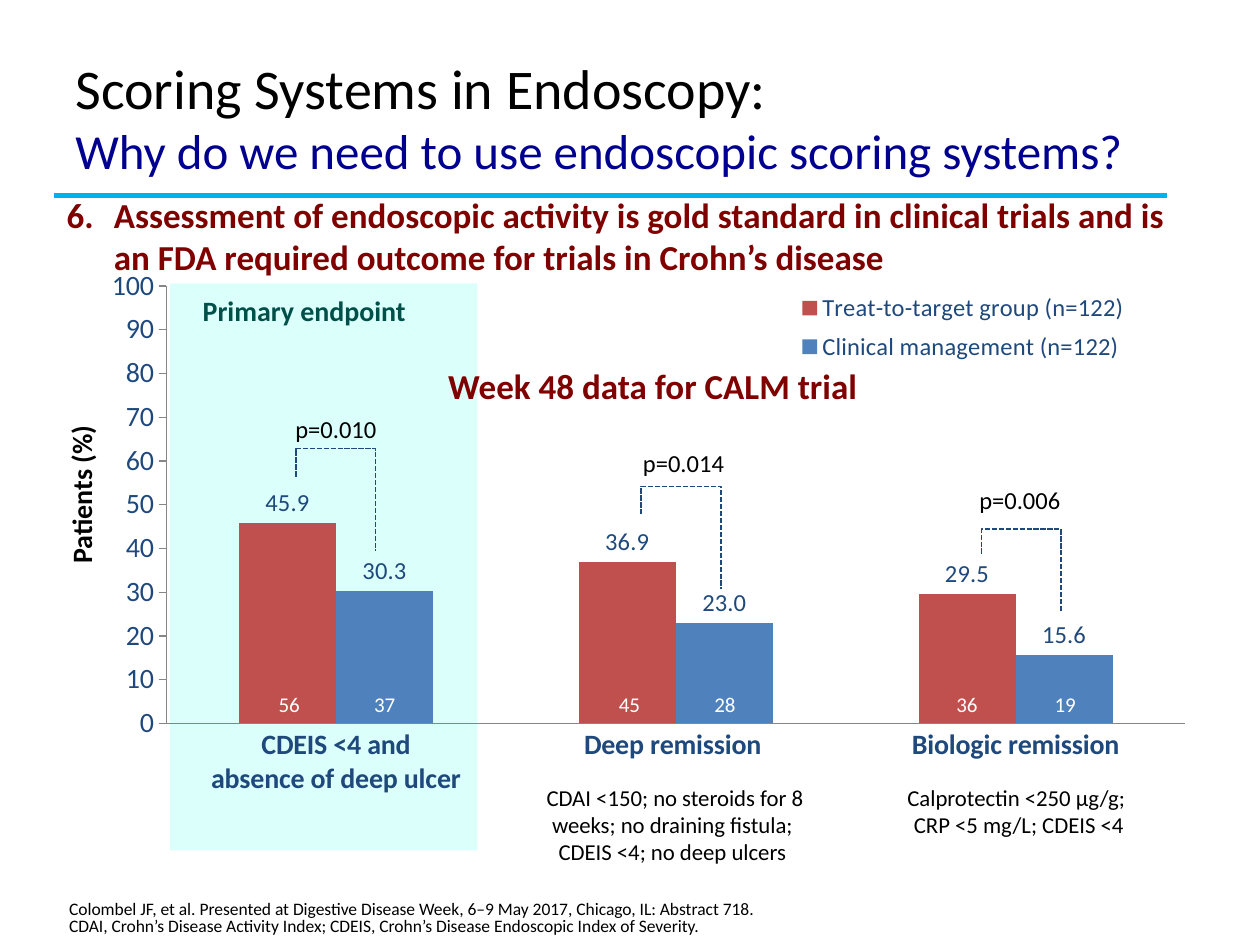
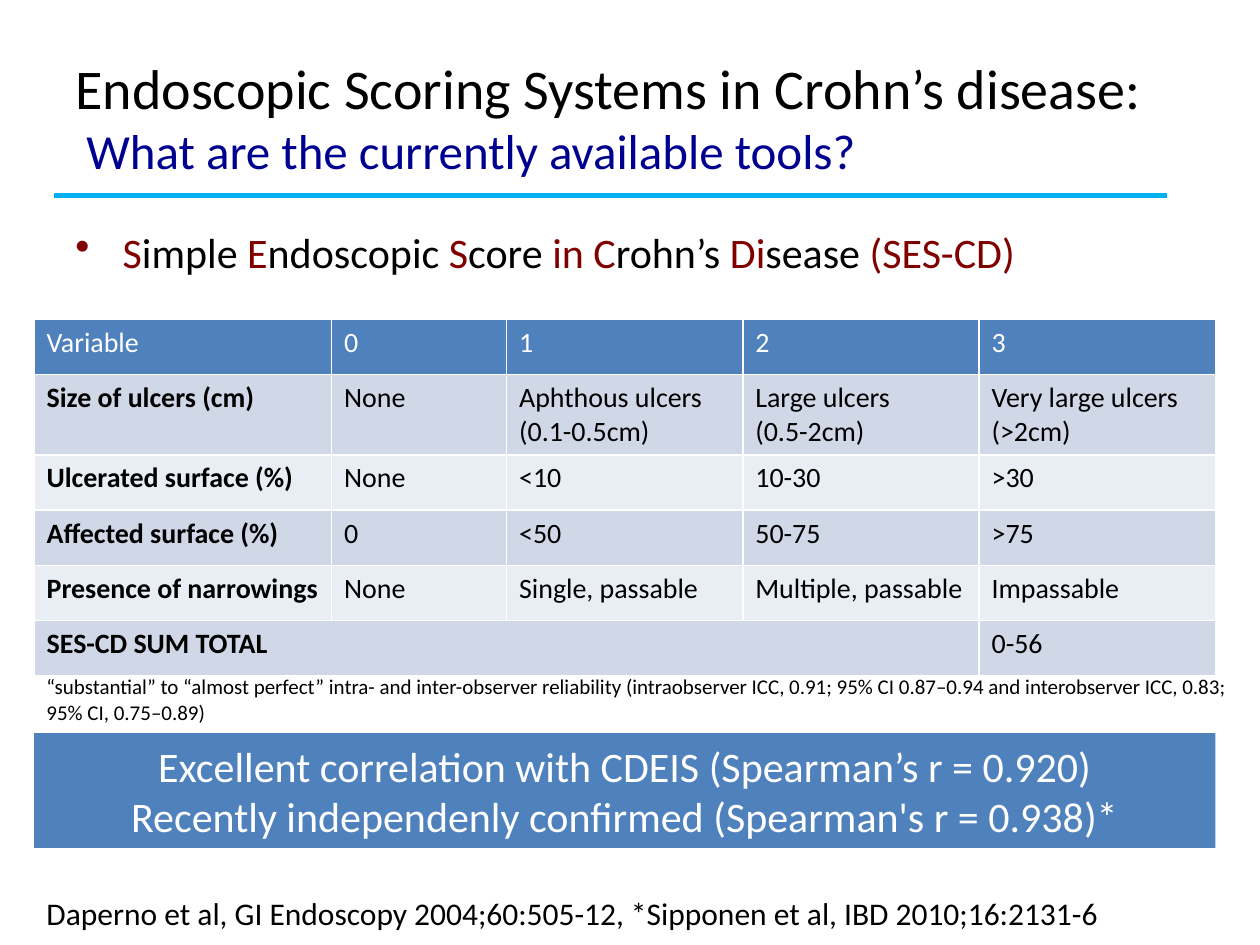
from dataclasses import dataclass, field
from typing import Any

from lxml import etree
from pptx import Presentation
from pptx.chart.data import CategoryChartData
from pptx.dml.color import RGBColor
from pptx.enum.chart import XL_CHART_TYPE, XL_LABEL_POSITION, XL_LEGEND_POSITION, XL_TICK_MARK
from pptx.enum.dml import MSO_LINE
from pptx.enum.shapes import MSO_CONNECTOR, MSO_SHAPE
from pptx.enum.text import MSO_ANCHOR, PP_ALIGN
from pptx.oxml.ns import qn
from pptx.util import Pt

COLUMN = XL_CHART_TYPE.COLUMN_CLUSTERED
OUTSIDE = XL_LABEL_POSITION.OUTSIDE_END
RIGHT = XL_LEGEND_POSITION.RIGHT
NO_TICK, OUT_TICK = XL_TICK_MARK.NONE, XL_TICK_MARK.OUTSIDE
DASH = MSO_LINE.SQUARE_DOT
STRAIGHT, RECT = MSO_CONNECTOR.STRAIGHT, MSO_SHAPE.RECTANGLE
TOP, MIDDLE, BOTTOM = MSO_ANCHOR.TOP, MSO_ANCHOR.MIDDLE, MSO_ANCHOR.BOTTOM
LEFT, CENTER = PP_ALIGN.LEFT, PP_ALIGN.CENTER

FONT = "Calibri"
HUES = {
    "black": "000000", "white": "FFFFFF", "navy": "000090", "maroon": "800000",
    "sky": "00B0F0", "mint": "B9FFF9", "teal": "005049", "ink": "1F497D",
    "red": "C0504D", "blue": "4F81BD", "band": "D0D8E8", "pale": "E9EDF4",
    "gray": "868686",
}


@dataclass
class Run:
    text: str
    form: dict[str, Any] = field(default_factory=dict)


@dataclass
class Label:
    box: tuple[float, float, float, float]
    lines: list[str | list[Run]]
    form: dict[str, Any]
    align: Any = LEFT
    anchor: Any = TOP
    wrap: bool = True
    para: dict[str, Any] = field(default_factory=dict)
    turn: float = 0


@dataclass
class Group:
    """One pair of columns: bracket, p value and patient counts."""
    p: str
    left: float
    top: float
    legs: tuple[float, float]
    mid: float
    high: float
    counts: tuple[tuple[str, float], ...]


def rgb(hue: str) -> RGBColor:
    return RGBColor.from_string(HUES[hue])


def style(font: Any, form: dict[str, Any]) -> None:
    for name, value in {"name": FONT, **form}.items():
        if name == "hue":
            font.color.rgb = rgb(value)
        else:
            setattr(font, name, Pt(value) if name == "size" else value)


def paint(shape: Any, hue: str) -> None:
    shape.fill.solid()
    shape.fill.fore_color.rgb = rgb(hue)


def sub(parent: Any, tag: str, **attrs: str) -> Any:
    return etree.SubElement(parent, qn(tag), attrs)


def write(frame: Any, label: Label) -> None:
    frame.word_wrap = label.wrap
    frame.vertical_anchor = label.anchor
    for i, line in enumerate(label.lines):
        para = frame.paragraphs[0] if i == 0 else frame.add_paragraph()
        para.alignment = label.align
        for name, value in label.para.items():
            setattr(para, name, value)
        for part in [Run(line)] if isinstance(line, str) else line:
            if part.text == "\n":
                para.add_line_break()
                continue
            run = para.add_run()
            run.text = part.text
            style(run.font, {**label.form, **part.form})


def add_text(slide: Any, label: Label) -> Any:
    shape = slide.shapes.add_textbox(*map(Pt, label.box))
    shape.rotation = label.turn
    write(shape.text_frame, label)
    return shape


def add_block(slide: Any, box: tuple[float, ...], hue: str) -> Any:
    shape = slide.shapes.add_shape(RECT, *map(Pt, box))
    shape.shadow.inherit = False
    paint(shape, hue)
    shape.line.fill.background()
    return shape


def add_bullet(shape: Any, tag: str, **attrs: str) -> None:
    props = shape.text_frame.paragraphs[0]._p.get_or_add_pPr()
    props.set("marL", str(Pt(27)))
    props.set("indent", str(-Pt(27)))
    sub(props, tag, **attrs)


def start(deck: Any, head: str, tail: str) -> Any:
    """New slide with the shared title and rule."""
    slide = deck.slides.add_slide(deck.slide_layouts[6])
    title = [Run(head), Run("\n"), Run(tail, {"size": 28, "hue": "navy"})]
    add_text(slide, Label((36, 21.6, 648, 90), [title],
                          {"size": 32, "hue": "black"}, anchor=MIDDLE))
    rule = slide.shapes.add_connector(STRAIGHT, Pt(31), Pt(111.6), Pt(666.7), Pt(111.6))
    rule.line.color.rgb = rgb("sky")
    rule.line.width = Pt(3)
    sub(rule._element.spPr, "a:effectLst")
    return slide


# Chart
def place(parent: Any, spot: int, box: tuple[float, ...], inner: bool = False) -> None:
    for old in parent.findall(qn("c:layout")):
        parent.remove(old)
    layout = etree.Element(qn("c:layout"))
    hand = sub(layout, "c:manualLayout")
    if inner:
        sub(hand, "c:layoutTarget", val="inner")
    for key in "xy":
        sub(hand, f"c:{key}Mode", val="edge")
    for key, value in zip("xywh", box):
        sub(hand, f"c:{key}", val=str(value))
    parent.insert(spot, layout)


def add_columns(slide: Any) -> None:
    data = CategoryChartData(number_format="#,##0.0")
    data.categories = ["CDEIS <4 and\nabsence of deep ulcer", "Deep remission ",
                       "Biologic remission"]
    data.add_series("Treat-to-target group (n=122)", (45.9, 36.9, 29.5))
    data.add_series("Clinical management (n=122)", (30.3, 23, 15.6))
    chart = slide.shapes.add_chart(COLUMN, Pt(32.4), Pt(147.6), Pt(651.6),
                                   Pt(376.6), data).chart
    style(chart.font, {"size": 18, "hue": "black"})
    chart.has_title = False

    plot = chart.plots[0]
    plot.gap_width, plot.overlap, plot.vary_by_categories = 150, 0, False
    for series, hue in zip(plot.series, ("red", "blue")):
        paint(series.format, hue)
        series.invert_if_negative = False
        tags = series.data_labels
        tags.show_value, tags.position = True, OUTSIDE
        tags.number_format, tags.number_format_is_linked = "#,##0.0", False
        style(tags.font, {"size": 14, "hue": "ink"})

    for axis, tick, bold in ((chart.category_axis, NO_TICK, True),
                             (chart.value_axis, OUT_TICK, False)):
        axis.major_tick_mark, axis.minor_tick_mark = tick, NO_TICK
        axis.has_major_gridlines = False
        axis.format.line.color.rgb = rgb("gray")
        style(axis.tick_labels.font, {"size": 16, "hue": "ink", "bold": bold})
    scale = chart.value_axis
    scale.minimum_scale, scale.maximum_scale, scale.major_unit = 0, 100, 10
    scale.tick_labels.number_format = "General"
    scale.tick_labels.number_format_is_linked = False

    chart.has_legend = True
    legend = chart.legend
    legend.position, legend.include_in_layout = RIGHT, False
    style(legend.font, {"size": 14, "hue": "ink"})
    place(legend._element, 1, (0.64, 0.04, 0.31, 0.13))

    # Clear backgrounds let the highlight show through
    root = chart._chartSpace
    body = root.find(qn("c:chart"))
    area = body.find(qn("c:plotArea"))
    place(area, 0, (0.096, 0.042, 0.894, 0.664), True)
    sub(sub(area, "c:spPr"), "a:noFill")
    clear = etree.Element(qn("c:spPr"))
    sub(clear, "a:noFill")
    sub(sub(clear, "a:ln"), "a:noFill")
    body.addnext(clear)


def add_group(slide: Any, group: Group) -> None:
    x, y, right = group.left, group.top, group.left + 45.4
    pen = slide.shapes.build_freeform(Pt(x), Pt(y + group.legs[0]))
    pen.add_line_segments([(Pt(x), Pt(y)), (Pt(right), Pt(y)),
                           (Pt(right), Pt(y + group.legs[1]))], close=False)
    mark = pen.convert_to_shape()
    mark.shadow.inherit = False
    mark.fill.background()
    mark.line.color.rgb = rgb("ink")
    mark.line.width, mark.line.dash_style = Pt(1), DASH
    add_text(slide, Label((group.mid - 30.5, group.high, 61, 24.2), [group.p],
                          {"size": 14, "hue": "black"}, CENTER, wrap=False))
    for text, left in group.counts:
        add_text(slide, Label((left, 391.7, 26.6, 21.8), [text],
                              {"size": 12, "hue": "white"}, CENTER, wrap=False))


GROUPS = [
    Group("p=0.010", 169.2, 256.3, (16, 58.3), 192, 233.3, (("56", 152), ("37", 206.6))),
    Group("p=0.014", 366.5, 278, (16, 58.3), 390.6, 252.7, (("45", 346.4), ("28", 401))),
    Group("p=0.006", 560.9, 302.4, (14, 47.2), 582.8, 273.6, (("36", 539.3), ("19", 595.4))),
]

NOTE = {"size": 13, "hue": "black"}
HEAD = {"size": 20, "hue": "maroon", "bold": True}
TRIAL = [
    Label((49, 175, 648, 90), ["Week 48 data for CALM trial"], HEAD, CENTER, MIDDLE),
    Label((298.8, 444.2, 173.5, 54.7),
          ["CDAI <150; no steroids for 8 weeks; no draining fistula; ",
           "CDEIS <4; no deep ulcers "], NOTE, CENTER),
    Label((500.4, 444.2, 163.4, 54.7),
          ["Calprotectin <250 µg/g;  CRP <5 mg/L; CDEIS <4"], NOTE, CENTER),
    Label((32.4, 511.2, 652.3, 27.4),
          ["Colombel JF, et al. Presented at Digestive Disease Week, 6–9 May 2017, "
           "Chicago, IL: Abstract 718.",
           "CDAI, Crohn’s Disease Activity Index; CDEIS, Crohn’s Disease Endoscopic "
           "Index of Severity."],
          {"size": 10, "hue": "black"}, anchor=BOTTOM, para={"line_spacing": Pt(10)}),
    Label((-0.7, 268.6, 94.3, 26.6), ["Patients (%)"],
          {"size": 16, "hue": "black", "bold": True}, wrap=False, turn=270),
    Label((108, 164.2, 131.8, 26.6), ["Primary endpoint"],
          {"size": 16, "hue": "teal", "bold": True}, CENTER, wrap=False),
]


def trial_slide(deck: Any) -> None:
    slide = start(deck, "Scoring Systems in Endoscopy:",
                  "Why do we need to use endoscopic scoring systems?")
    point = add_text(slide, Label(
        (31, 107.3, 648, 57.6),
        ["Assessment of endoscopic activity is gold standard in clinical trials and is "
         "an FDA required outcome for trials in Crohn’s disease"],
        HEAD, para={"space_before": Pt(4)}))
    add_bullet(point, "a:buAutoNum", type="arabicPeriod", startAt="6")
    glow = add_block(slide, (97.2, 162, 175.7, 324), "mint")
    tint = glow._element.spPr.find(qn("a:solidFill"))[0]
    sub(tint, "a:alpha", val="50000")
    add_columns(slide)
    for label in TRIAL:
        add_text(slide, label)
    for group in GROUPS:
        add_group(slide, group)


# Score table
ROWS = [
    ["Variable", "0", "1", "2", "3"],
    ["Size of ulcers (cm)", "None", "Aphthous ulcers (0.1-0.5cm)",
     "Large ulcers\n(0.5-2cm)", "Very large ulcers (>2cm)"],
    ["Ulcerated surface (%)", "None", "<10", "10-30", ">30"],
    ["Affected surface (%)", "0", "<50", "50-75", ">75"],
    ["Presence of narrowings", "None", "Single, passable", "Multiple, passable", "Impassable"],
    ["SES-CD SUM TOTAL", "", "", "", "0-56"],
]


def edge(cell: Any) -> None:
    props = cell._tc.get_or_add_tcPr()
    for i, side in enumerate("LRTB"):
        line = etree.Element(qn(f"a:ln{side}"), w=str(Pt(1)))
        sub(sub(line, "a:solidFill"), "a:srgbClr", val=HUES["white"])
        props.insert(i, line)


def add_scores(slide: Any) -> None:
    table = slide.shapes.add_table(len(ROWS), 5, Pt(19.5), Pt(182.4), Pt(675), Pt(204)).table
    for col, width in zip(table.columns, (170, 100, 135, 135, 135)):
        col.width = Pt(width)
    for r, row in enumerate(ROWS):
        table.rows[r].height = Pt(46 if r == 1 else 31.6)
        for c, text in enumerate(row):
            cell = table.cell(r, c)
            paint(cell, "blue" if r == 0 else "band" if r % 2 else "pale")
            edge(cell)
            cell.text = text
            for para in cell.text_frame.paragraphs:
                style(para.font, {"size": 16})
                for run in para.runs:
                    style(run.font, {"size": 16, "hue": "black" if r else "white",
                                     "bold": r > 0 and c == 0})
    table.cell(5, 0).merge(table.cell(5, 3))


def score_slide(deck: Any) -> None:
    slide = start(deck, "Endoscopic Scoring Systems in Crohn’s disease:",
                  " What are the currently available tools?")
    words = ["S", "imple", " E", "ndoscopic", " S", "core", " in C", "rohn’s", " Di",
             "sease ", "(SES-CD)"]
    runs = [Run(word, {"hue": ("maroon", "black")[i % 2]}) for i, word in enumerate(words)]
    point = add_text(slide, Label((36, 126, 648, 69), [runs], {"size": 24},
                                  para={"space_before": Pt(4.8)}))
    add_bullet(point, "a:buChar", char="•")
    add_scores(slide)
    add_text(slide, Label(
        (19.5, 507.6, 640, 28.8),
        ["Daperno et al, GI Endoscopy 2004;60:505-12, *Sipponen et al, IBD 2010;16:2131-6"],
        {"size": 18, "hue": "black"}))
    box = (19.5, 419, 675, 65.5)
    write(add_block(slide, box, "blue").text_frame, Label(
        box, ["Excellent correlation with CDEIS (Spearman’s r = 0.920)",
              "Recently independenly confirmed (Spearman's r = 0.938)*"],
        {"size": 24, "hue": "white"}, CENTER, MIDDLE))
    add_text(slide, Label(
        (19.5, 381.6, 700.5, 36),
        ["“substantial” to “almost perfect” intra- and inter-observer reliability "
         "(intraobserver ICC, 0.91; 95% CI 0.87–0.94 and interobserver ICC, 0.83; "
         "95% CI, 0.75–0.89)"], {"size": 12, "hue": "black"}))


def main() -> None:
    deck = Presentation()
    deck.slide_width, deck.slide_height = Pt(720), Pt(540)
    trial_slide(deck)
    score_slide(deck)
    deck.save("out.pptx")


if __name__ == "__main__":
    main()
